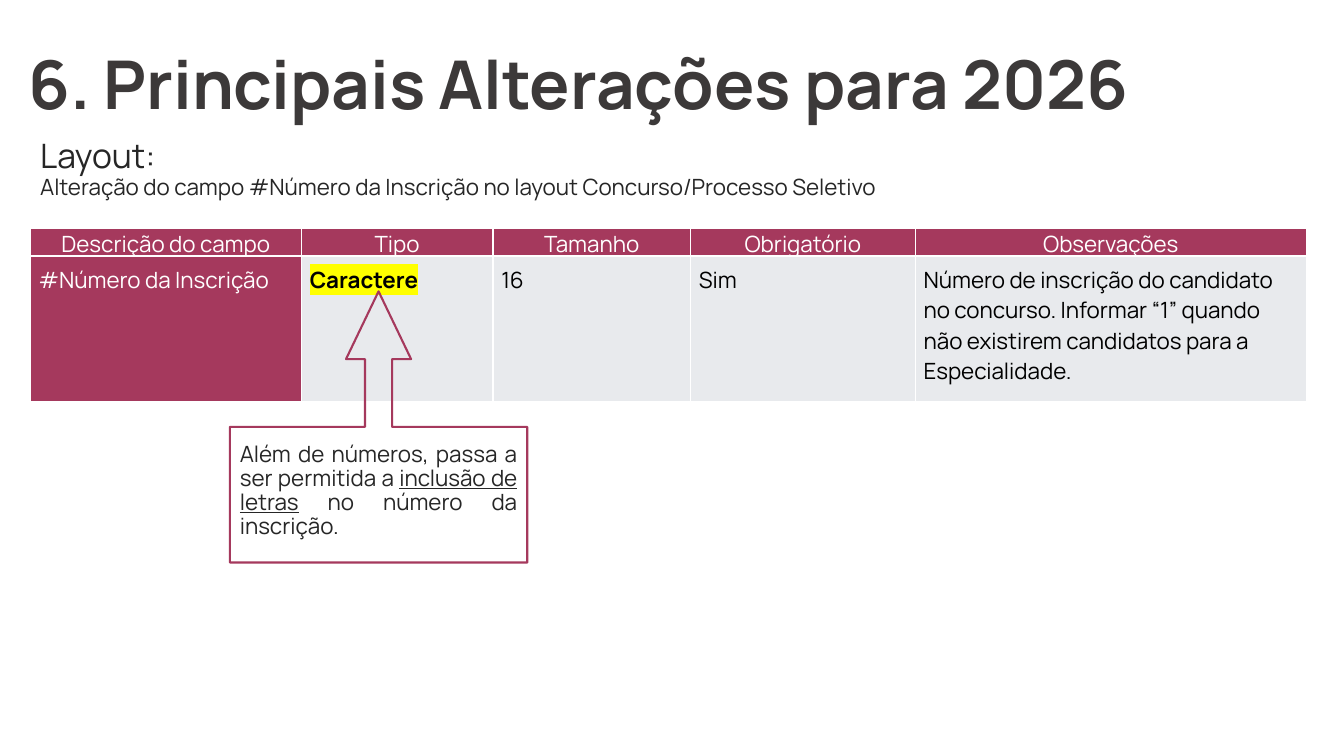
import pptx
import pptx.dml.color
import pptx.enum.shapes
import pptx.enum.text
import pptx.oxml
import pptx.oxml.ns
import pptx.util

Pt = pptx.util.Pt
ALIGN = pptx.enum.text.PP_ALIGN
ANCHOR = pptx.enum.text.MSO_ANCHOR
WINE, GRAY, INK = "A5395D", "E8EAED", "262626"


def color(value):
    return pptx.dml.color.RGBColor.from_string(value)


def add_run(paragraph, text, size, text_color, **formats):
    run = paragraph.add_run()
    run.text = text
    run.font.color.rgb = color(text_color)
    for name, value in {"name": "Manrope", "size": Pt(size), **formats}.items():
        setattr(run.font, name, value)
    return run


presentation = pptx.Presentation()
presentation.slide_width = Pt(960)
presentation.slide_height = Pt(540)
slide = presentation.slides.add_slide(presentation.slide_layouts[5])

title = slide.shapes.title
title_box = {"left": 13, "top": 26.6, "width": 819.4, "height": 65.5}
for name, value in title_box.items():
    setattr(title, name, Pt(value))
title.text_frame.word_wrap = True
title.text_frame.auto_size = pptx.enum.text.MSO_AUTO_SIZE.SHAPE_TO_FIT_TEXT
title.text_frame.vertical_anchor = ANCHOR.TOP
title_paragraph = title.text_frame.paragraphs[0]
title_paragraph.alignment = ALIGN.LEFT
add_run(title_paragraph, "6. Principais Alterações para 2026", 48, "3C3939", bold=True)

text_boxes = [
    ((21.6, 90, 896.4, 62.6), ALIGN.LEFT, [
        ("Layout:", 24, {}),
        ("\n", 24, {}),
        ("Alteração do campo #Número da Inscrição no layout Concurso/Processo Seletivo", 16, {}),
    ]),
    ((164.2, 290.9, 212.4, 120.2), ALIGN.JUSTIFY, [
        ("Além de números, passa a ser permitida a ", 16, {}),
        ("inclusão de letras", 16, {"underline": True}),
        (" no número da inscrição.", 16, {}),
    ]),
]
for box, alignment, runs in text_boxes:
    text_box = slide.shapes.add_textbox(*map(Pt, box))
    text_box.text_frame.word_wrap = True
    text_box.text_frame.vertical_anchor = ANCHOR.MIDDLE
    paragraph = text_box.text_frame.paragraphs[0]
    paragraph.alignment = alignment
    paragraph.line_spacing = 0.9
    for text, size, formats in runs:
        if text == "\n":
            paragraph.add_line_break()
        else:
            add_run(paragraph, text, size, INK, **formats)

rows = [
    ["Descrição do campo", "Tipo", "Tamanho", "Obrigatório", "Observações"],
    ["#Número da Inscrição", "Caractere", "16", "Sim",
     "Número de inscrição do candidato no concurso. Informar “1” quando "
     "não existirem candidatos para a Especialidade."],
]
column_widths = [193.7, 136.8, 141.1, 160.6, 279.3]
row_heights = [18, 104.4]
table_frame = slide.shapes.add_table(
    len(rows), len(column_widths), Pt(21.6), Pt(162.9), Pt(911.5), Pt(124.5))
table = table_frame.table
for column, width in zip(table.columns, column_widths):
    column.width = Pt(width)
for row, height in zip(table.rows, row_heights):
    row.height = Pt(height)

for row_index, texts in enumerate(rows):
    for column_index, text in enumerate(texts):
        cell = table.cell(row_index, column_index)
        header = row_index == 0
        dark = header or column_index == 0
        highlighted = text == "Caractere"
        margin = Pt(0.7 if header else 6)
        cell_formats = {
            "margin_left": margin,
            "margin_right": margin,
            "margin_top": margin,
            "margin_bottom": 0 if header else margin,
            "vertical_anchor": ANCHOR.MIDDLE if header else ANCHOR.TOP,
        }
        for name, value in cell_formats.items():
            setattr(cell, name, value)
        properties = cell._tc.get_or_add_tcPr()
        for side in "LRTB":
            properties.append(pptx.oxml.parse_xml(
                f'<a:ln{side} {pptx.oxml.ns.nsdecls("a")} w="12700"><a:solidFill>'
                f'<a:srgbClr val="FFFFFF"/></a:solidFill></a:ln{side}>'))
        cell.fill.solid()
        cell.fill.fore_color.rgb = color(WINE if dark else GRAY)
        paragraph = cell.text_frame.paragraphs[0]
        paragraph.alignment = ALIGN.CENTER if header else ALIGN.LEFT
        run = add_run(paragraph, text, 16, "FFFFFF" if dark else "000000", bold=highlighted)
        if highlighted:
            latin = run.font._element.find(pptx.oxml.ns.qn("a:latin"))
            latin.addprevious(pptx.oxml.parse_xml(
                f'<a:highlight {pptx.oxml.ns.nsdecls("a")}>'
                '<a:srgbClr val="FFFF00"/></a:highlight>'))

callout = slide.shapes.add_shape(
    pptx.enum.shapes.MSO_SHAPE.UP_ARROW_CALLOUT, Pt(164.2), Pt(208.1), Pt(212.4), Pt(193.7))
for index, adjustment in enumerate([0.1, 0.12, 0.25, 0.5]):
    callout.adjustments[index] = adjustment
callout.shadow.inherit = False
callout.fill.background()
callout.line.color.rgb = color(WINE)
callout.line.width = Pt(1.5)

presentation.save("out.pptx")
